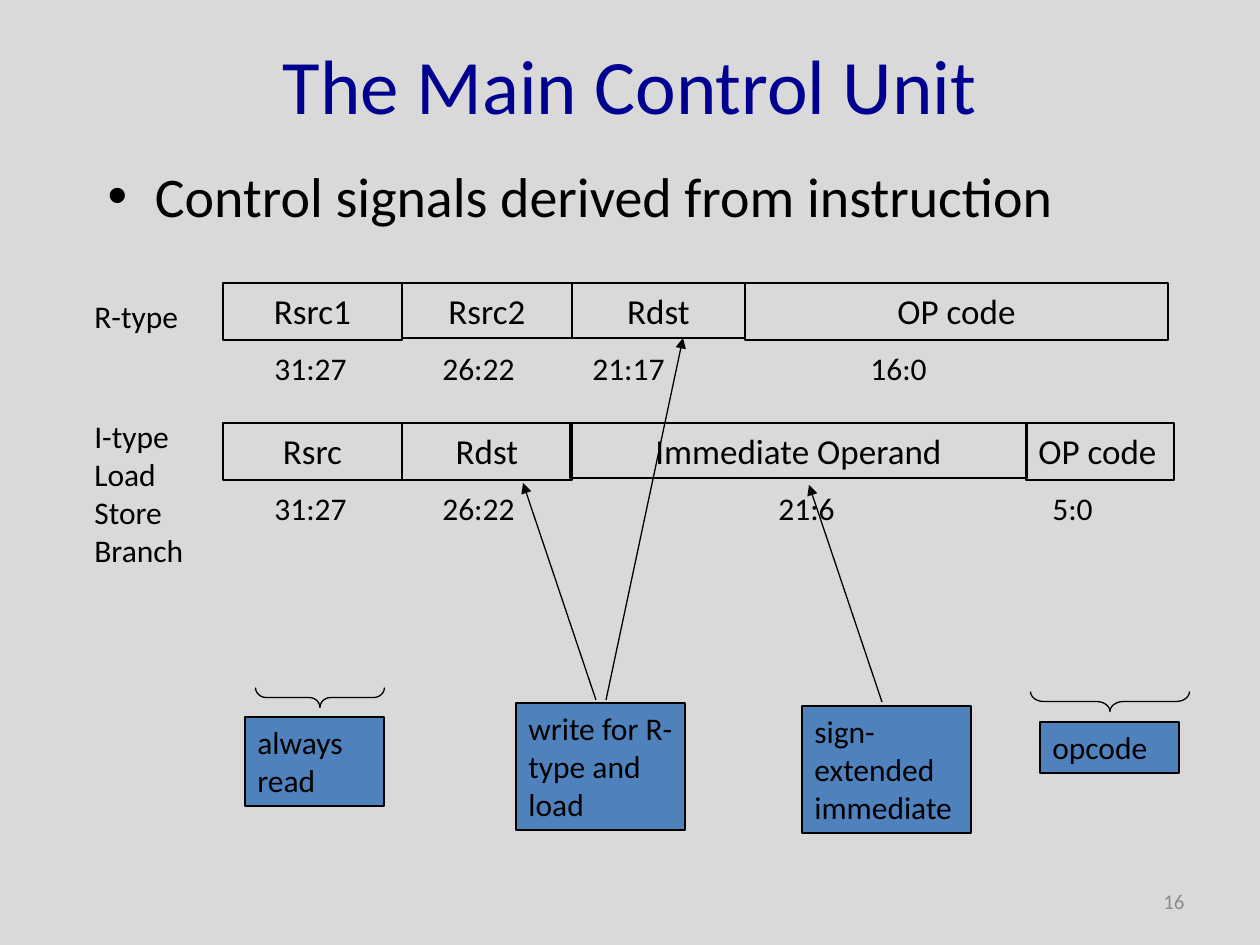
from pptx import Presentation
from pptx.dml.color import RGBColor
from pptx.enum.shapes import MSO_CONNECTOR, MSO_SHAPE
from pptx.enum.text import MSO_ANCHOR, PP_ALIGN
from pptx.oxml.ns import qn
from pptx.util import Emu, Pt
from lxml import etree
from dataclasses import dataclass

EMU_PER_PX = 914400 / 126


@dataclass(frozen=True)
class Theme:
    font: str = "Calibri"
    background: RGBColor = RGBColor(0xD9, 0xD9, 0xD9)
    heading: RGBColor = RGBColor(0x00, 0x00, 0x90)
    ink: RGBColor = RGBColor(0x00, 0x00, 0x00)
    note: RGBColor = RGBColor(0x4F, 0x81, 0xBD)
    muted: RGBColor = RGBColor(0x8C, 0x8C, 0x8C)
    title_size: int = 44
    body_size: int = 32
    field_size: int = 20
    label_size: int = 18
    number_size: int = 12


theme = Theme()


def px(*lengths):
    return [Emu(round(length * EMU_PER_PX)) for length in lengths]


def write(shape, text, size, color=theme.ink, align=PP_ALIGN.LEFT,
          anchor=MSO_ANCHOR.TOP, wrap=True):
    """Fill the shape with one paragraph for each line of text."""
    frame = shape.text_frame
    frame.word_wrap = wrap
    frame.vertical_anchor = anchor
    for index, line in enumerate(text.split("\n")):
        paragraph = frame.add_paragraph() if index else frame.paragraphs[0]
        paragraph.alignment = align
        run = paragraph.add_run()
        run.text = line
        run.font.name = theme.font
        run.font.size = Pt(size)
        run.font.color.rgb = color


prs = Presentation()
prs.slide_width, prs.slide_height = px(1260, 945)
slide = prs.slides.add_slide(prs.slide_layouts[1])
slide.background.fill.solid()
slide.background.fill.fore_color.rgb = theme.background
shapes = slide.shapes

title = shapes.title
title.left, title.top, title.width, title.height = px(63, 21, 1134, 126)
write(title, "The Main Control Unit", theme.title_size, theme.heading,
      PP_ALIGN.CENTER, MSO_ANCHOR.MIDDLE)

body = slide.placeholders[1]
body.left, body.top, body.width, body.height = px(95, 155, 1140, 96)
write(body, "Control signals derived from instruction", theme.body_size)

# Instruction formats: name, left, width, height, alignment; then bit range, left, width
center, left_aligned = PP_ALIGN.CENTER, PP_ALIGN.LEFT
formats = [
    (283, [("Rsrc1", 223, 179, 57, center), ("Rsrc2", 402, 170, 55, center),
           ("Rdst", 572, 173, 55, center), ("OP code", 745, 423, 57, center)],
     [("31:27", 262, 98), ("26:22", 430, 98), ("21:17", 580, 98), ("16:0", 858, 82)]),
    (423, [("Rsrc", 223, 179, 57, center), ("Rdst", 402, 170, 57, center),
           ("OP code", 1026, 148, 57, left_aligned),
           ("Immediate Operand", 570, 457, 55, center)],
     [("31:27", 262, 98), ("26:22", 430, 98), ("21:6", 766, 82), ("5:0", 1040, 67)]),
]
for top, fields, bit_ranges in formats:
    for name, left, width, height, align in fields:
        field = shapes.add_shape(MSO_SHAPE.RECTANGLE, *px(left, top, width, height))
        field.shadow.inherit = False
        field.fill.background()
        field.line.color.rgb = theme.ink
        field.line.width = Pt(1.5)
        write(field, name, theme.field_size, align=align)
    for bits, left, width in bit_ranges:
        bit_label = shapes.add_textbox(*px(left, top + 60, width, 50))
        write(bit_label, bits, theme.label_size, wrap=False)

for kinds, top, width, height in [("R-type", 291, 118, 50),
                                  ("I-type\nLoad\nStore\nBranch", 411, 116, 165)]:
    format_label = shapes.add_textbox(*px(82, top, width, height))
    write(format_label, kinds, theme.label_size, wrap=False)

# Braces are drawn upright and turned to open upwards
for left, top, height, curve in [(1100, 622, 159, 0.665), (310, 633, 129, 0.539)]:
    brace = shapes.add_shape(MSO_SHAPE.LEFT_BRACE, *px(left, top, 20, height))
    brace.rotation = 270
    brace.adjustments[0] = curve
    brace.shadow.inherit = False
    brace.fill.background()
    brace.line.color.rgb = theme.ink
    brace.line.width = Pt(0.75)

notes = [("opcode", 1040, 722, 139, 51),
         ("always read", 245, 717, 139, 89),
         ("write for R-type and load", 516, 703, 169, 127),
         ("sign-extended immediate", 802, 706, 169, 127)]
for meaning, *box in notes:
    note = shapes.add_shape(MSO_SHAPE.RECTANGLE, *px(*box))
    note.shadow.inherit = False
    note.fill.solid()
    note.fill.fore_color.rgb = theme.note
    note.line.color.rgb = theme.ink
    note.line.width = Pt(0.75)
    write(note, meaning, theme.label_size)

for ends in [(596, 700, 523, 483), (606, 700, 683, 338), (882, 702, 809, 485)]:
    arrow = shapes.add_connector(MSO_CONNECTOR.STRAIGHT, *px(*ends))
    arrow.line.color.rgb = theme.ink
    arrow.line.width = Pt(0.75)
    etree.SubElement(arrow.line._get_or_add_ln(), qn("a:tailEnd"), type="triangle")
    etree.SubElement(arrow._element.spPr, qn("a:effectLst"))

slide_number = shapes.add_textbox(*px(903, 876, 294, 50))
write(slide_number, "16", theme.number_size, theme.muted,
      PP_ALIGN.RIGHT, MSO_ANCHOR.MIDDLE)

prs.save("out.pptx")
